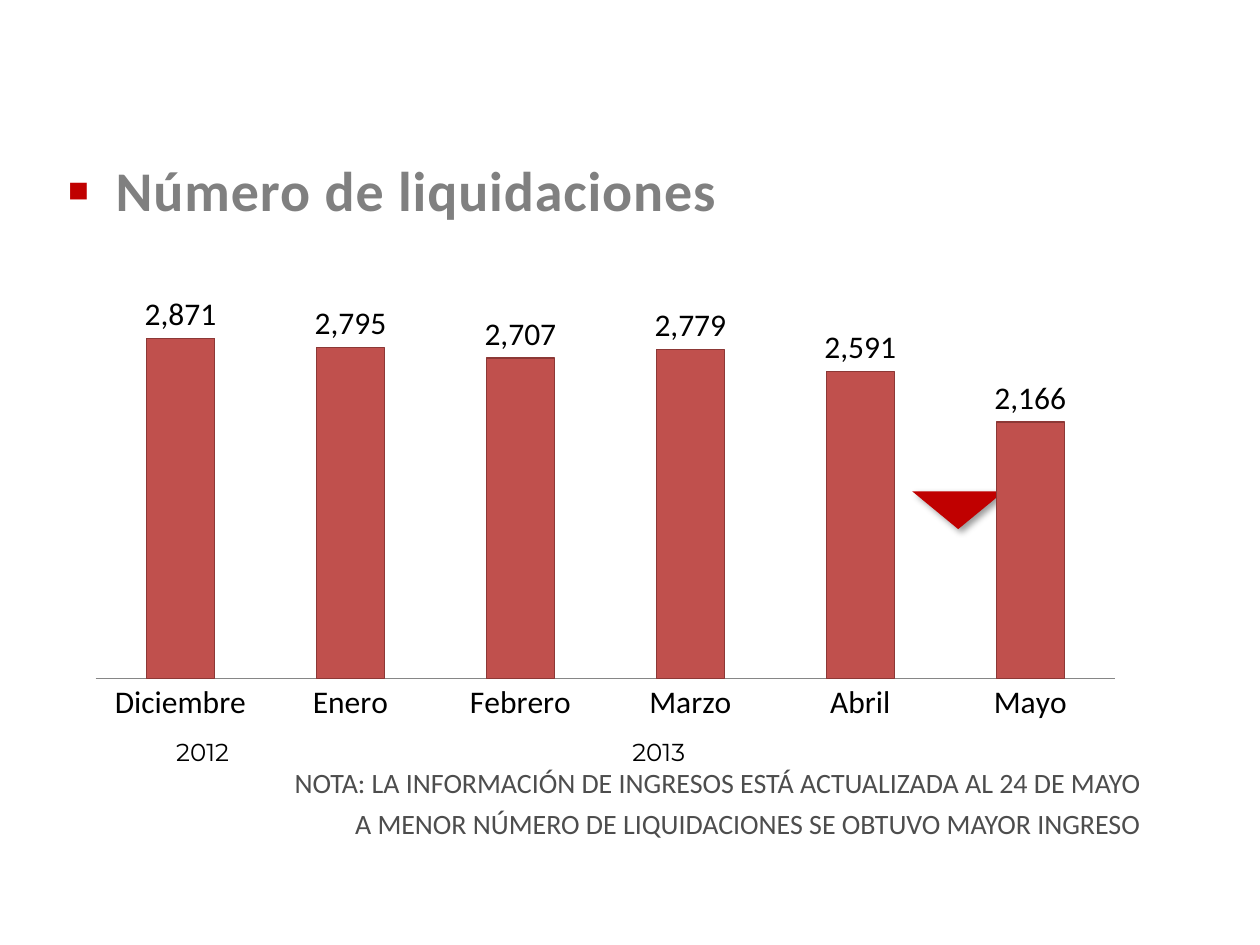
from dataclasses import dataclass

from lxml import etree
from pptx import Presentation
from pptx.chart.data import CategoryChartData
from pptx.dml.color import RGBColor
from pptx.enum.chart import XL_CHART_TYPE, XL_LABEL_POSITION, XL_TICK_MARK
from pptx.enum.shapes import MSO_SHAPE
from pptx.enum.text import PP_ALIGN
from pptx.oxml import parse_xml
from pptx.oxml.ns import nsdecls, qn
from pptx.util import Inches, Pt

COLUMNS = XL_CHART_TYPE.COLUMN_CLUSTERED
OUTSIDE_END = XL_LABEL_POSITION.OUTSIDE_END
NO_TICK = XL_TICK_MARK.NONE
TRIANGLE = MSO_SHAPE.ISOSCELES_TRIANGLE
JUSTIFY = PP_ALIGN.JUSTIFY


@dataclass(frozen=True)
class Theme:
    """Colours, fonts and type sizes of the slide."""

    accent: str = "C00000"
    title: str = "808080"
    note: str = "4D4D4D"
    text: str = "000000"
    bar: str = "C0504D"
    bar_line: str = "8C3836"
    axis: str = "868686"
    body_font: str = "Calibri"
    year_font: str = "Montserrat"
    title_size: int = 32
    chart_size: int = 18
    note_size: int = 16
    year_size: int = 14


THEME = Theme()
SETTLEMENTS = {
    "Diciembre": 2871,
    "Enero": 2795,
    "Febrero": 2707,
    "Marzo": 2779,
    "Abril": 2591,
    "Mayo": 2166,
}
YEARS = {"2012": 1.3, "2013": 4.92}
NOTES = [
    ("NOTA: LA INFORMACIÓN DE INGRESOS ESTÁ ACTUALIZADA AL 24 DE MAYO", (2.24, 6.03, 7.01, 0.37)),
    ("A MENOR NÚMERO DE LIQUIDACIONES SE OBTUVO MAYOR INGRESO", (2.72, 6.35, 6.54, 0.37)),
]


def to_inches(box):
    """Turn a left, top, width, height box into lengths."""
    return [Inches(value) for value in box]


def style_font(font, name, size, color, bold=False):
    """Apply a typeface, size, weight and colour to a font."""
    for attribute, value in {"name": name, "size": Pt(size), "bold": bold}.items():
        setattr(font, attribute, value)
    font.color.rgb = RGBColor.from_string(color)


def add_text(slide, box, text, wrap=True, **style):
    """Add a one-line text box and return its paragraph."""
    frame = slide.shapes.add_textbox(*to_inches(box)).text_frame
    frame.word_wrap = wrap
    paragraph = frame.paragraphs[0]
    run = paragraph.add_run()
    run.text = text
    style_font(run.font, **style)
    return paragraph


def add_title(slide, box):
    """Add the bulleted title."""
    paragraph = add_text(slide, box, "Número de liquidaciones", name=THEME.body_font,
                         size=THEME.title_size, color=THEME.title, bold=True)
    paragraph.alignment = JUSTIFY
    paragraph.line_spacing = 1.5
    paragraph.runs[0].font._element.set("spc", "50")
    properties = paragraph._p.get_or_add_pPr()
    indent = Inches(0.39)
    properties.set("marL", str(indent))
    properties.set("indent", str(-indent))
    color = etree.SubElement(properties, qn("a:buClr"))
    etree.SubElement(color, qn("a:srgbClr"), val=THEME.accent)
    etree.SubElement(properties, qn("a:buSzPct"), val="120000")
    etree.SubElement(properties, qn("a:buFont"), typeface="Arial")
    etree.SubElement(properties, qn("a:buChar"), char="▪")


def add_decrease_marker(slide, box):
    """Add the shadowed triangle that points down."""
    marker = slide.shapes.add_shape(TRIANGLE, *to_inches(box))
    marker.fill.solid()
    marker.fill.fore_color.rgb = RGBColor.from_string(THEME.accent)
    marker.line.fill.background()
    properties = marker._element.spPr
    properties.find(qn("a:xfrm")).set("flipV", "1")
    properties.append(parse_xml(
        f'<a:effectLst {nsdecls("a")}><a:outerShdw blurRad="{Pt(4)}" dist="{Pt(3)}" '
        'dir="2700000" algn="tl" rotWithShape="0"><a:srgbClr val="000000">'
        '<a:alpha val="40000"/></a:srgbClr></a:outerShdw></a:effectLst>'))


def set_plot_area(chart, **fractions):
    """Fix the inner plot area as fractions of the chart."""
    plot_area = chart._chartSpace.chart.plotArea
    for layout in plot_area.findall(qn("c:layout")):
        plot_area.remove(layout)
    values = "".join(f'<c:{key} val="{value}"/>' for key, value in fractions.items())
    plot_area.insert(0, parse_xml(
        f'<c:layout {nsdecls("c")}><c:manualLayout><c:layoutTarget val="inner"/>'
        f'<c:xMode val="edge"/><c:yMode val="edge"/>{values}</c:manualLayout></c:layout>'))


def add_settlements_chart(slide, box):
    """Add the monthly column chart."""
    chart_data = CategoryChartData(number_format="#,##0")
    chart_data.categories = list(SETTLEMENTS)
    chart_data.add_series("Liquidaciones", list(SETTLEMENTS.values()))
    chart = slide.shapes.add_chart(COLUMNS, *to_inches(box), chart_data).chart
    chart.has_legend = chart.has_title = False
    style_font(chart.font, THEME.body_font, THEME.chart_size, THEME.text)
    set_plot_area(chart, x=0.02, y=0.02, w=0.96, h=0.87)

    value_axis = chart.value_axis
    scale = {"minimum_scale": 0, "maximum_scale": 3500,
             "has_major_gridlines": False, "visible": False}
    for attribute, value in scale.items():
        setattr(value_axis, attribute, value)
    category_axis = chart.category_axis
    category_axis.major_tick_mark = NO_TICK
    category_axis.format.line.color.rgb = RGBColor.from_string(THEME.axis)

    plot = chart.plots[0]
    for attribute, value in {"gap_width": 150, "vary_by_categories": False,
                             "has_data_labels": True}.items():
        setattr(plot, attribute, value)
    labels = plot.data_labels
    for attribute, value in {"show_value": True, "number_format": "#,##0",
                             "number_format_is_linked": False,
                             "position": OUTSIDE_END}.items():
        setattr(labels, attribute, value)
    style_font(labels.font, THEME.body_font, THEME.chart_size, THEME.text)
    bars = plot.series[0].format
    bars.fill.solid()
    bars.fill.fore_color.rgb = RGBColor.from_string(THEME.bar)
    bars.line.color.rgb = RGBColor.from_string(THEME.bar_line)
    bars.line.width = Pt(0.75)


def add_years(slide, top):
    """Add the year captions below the months."""
    for year, left in YEARS.items():
        add_text(slide, (left, top, 0.87, 0.34), year, name=THEME.year_font,
                 size=THEME.year_size, color=THEME.text)


def add_notes(slide):
    """Add the two remarks at the foot of the slide."""
    for text, box in NOTES:
        add_text(slide, box, text, wrap=False, name=THEME.body_font,
                 size=THEME.note_size, color=THEME.note)


def main():
    """Build and save the slide."""
    presentation = Presentation()
    presentation.slide_width, presentation.slide_height = Inches(10), Inches(7.5)
    slide = presentation.slides.add_slide(presentation.slide_layouts[6])
    add_title(slide, (0.43, 0.92, 9.21, 0.83))
    add_years(slide, 5.8)
    add_decrease_marker(slide, (7.24, 3.9, 0.73, 0.3))
    add_settlements_chart(slide, (0.59, 2.02, 8.43, 3.78))
    add_notes(slide)
    presentation.save("out.pptx")


if __name__ == "__main__":
    main()
